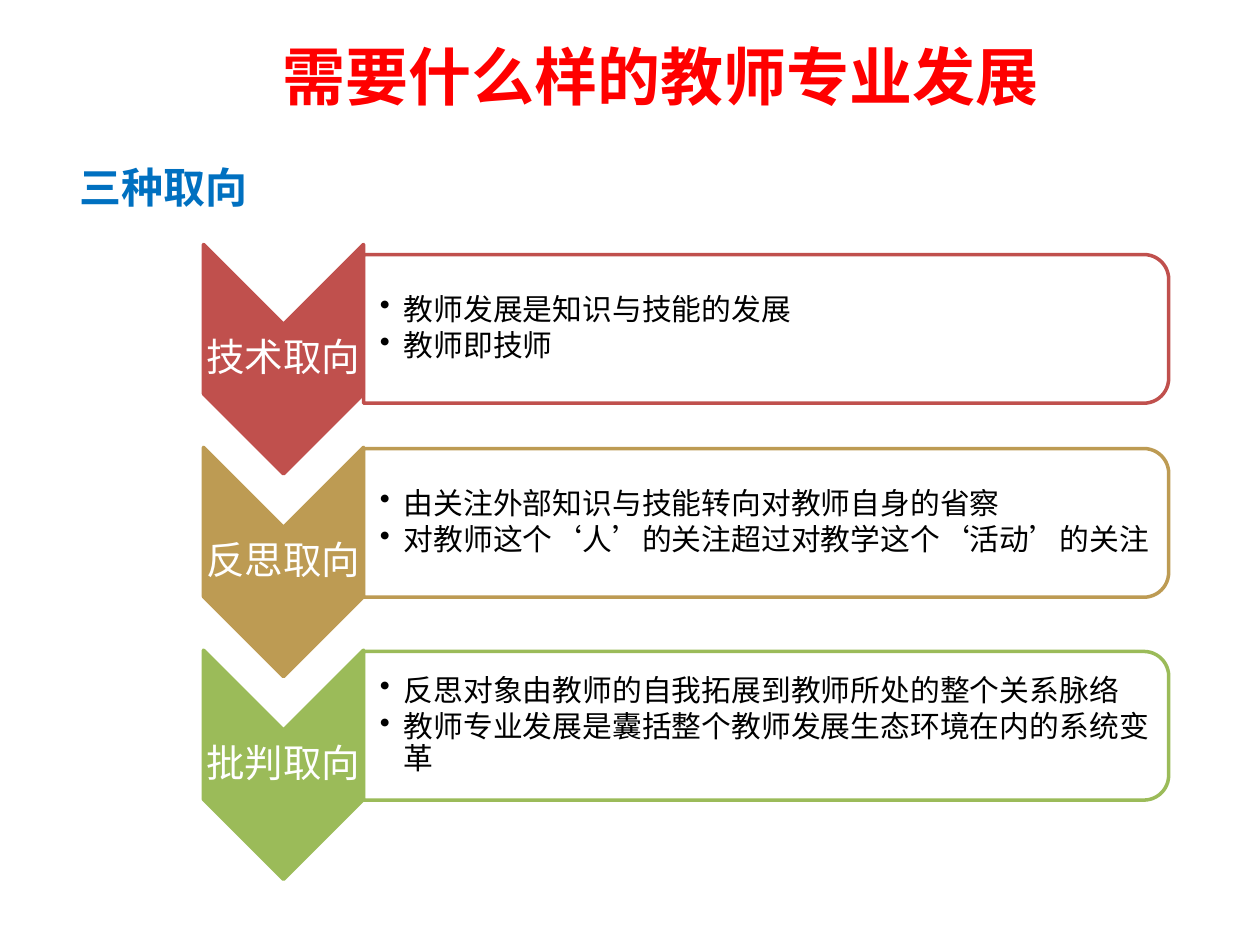
from lxml.etree import SubElement
from pptx import Presentation
from pptx.dml.color import RGBColor
from pptx.enum.shapes import MSO_SHAPE as Shape
from pptx.enum.text import MSO_ANCHOR as Anchor, MSO_AUTO_SIZE as AutoSize, PP_ALIGN as Align
from pptx.oxml.ns import qn
from pptx.util import Inches, Pt

# Content
TITLE = "需要什么样的教师专业发展"
SUBTITLE = "三种取向"
ORIENTATIONS = [
    {"name": "技术取向", "color": "C0504D", "panel_rise": 0.24,
     "points": ["教师发展是知识与技能的发展", "教师即技师"]},
    {"name": "反思取向", "color": "BD9B53", "panel_rise": 0.31,
     "points": ["由关注外部知识与技能转向对教师自身的省察",
                "对教师这个‘人’的关注超过对教学这个‘活动’的关注"]},
    {"name": "批判取向", "color": "9BBB59", "panel_rise": 0.31,
     "points": ["反思对象由教师的自我拓展到教师所处的整个关系脉络",
                "教师专业发展是囊括整个教师发展生态环境在内的系统变革"]},
]

# Theme: font, size, color, bold
THEME = {
    "title": ("Lato", 36, "FF0000", True),
    "subtitle": ("Calibri", 24, "0070C0", True),
    "label": ("Calibri", 22, "FFFFFF", False),
    "point": ("Calibri", 17, "000000", False),
}
PANEL_FILL, PANEL_ALPHA, LINE_WIDTH = "FFFFFF", 90, 2

# Layout, in inches
TITLE_AREA = (0.83, -0.03, 8.82, 1.25)
BODY_AREA = (0.53, 1.23, 9.04, 7.01)
FIRST_CENTER, ROW_PITCH = 2.85, 1.61
CHEVRON_X, CHEVRON_SIZE = 2.25, (1.82, 1.27)
PANEL_X, PANEL_SIZE = 6.08, (1.18, 6.39)
LABEL_SIZE = (1.27, 0.55)
POINTS_X, POINTS_SIZE = 6.05, (6.33, 1.07)
INDENT = 0.19


def set_all(target, values):
    for name, value in values.items():
        setattr(target, name, value)


def centered(x, y, size):
    width, height = size
    return [Inches(v) for v in (x - width / 2, y - height / 2, width, height)]


def write(frame, lines, style, inset=None, anchor=Anchor.MIDDLE, bullet=None, **spacing):
    font, size, color, bold = THEME[style]
    set_all(frame, {"word_wrap": True, "auto_size": AutoSize.NONE, "vertical_anchor": anchor})
    if inset:
        sides = ("margin_left", "margin_top", "margin_right", "margin_bottom")
        set_all(frame, {side: Inches(v) for side, v in zip(sides, inset)})
    for number, line in enumerate(lines):
        para = frame.paragraphs[0] if number == 0 else frame.add_paragraph()
        set_all(para, spacing)
        properties = para._p.get_or_add_pPr()
        indent = Inches(INDENT) if bullet else 0
        properties.set("marL", str(indent))
        properties.set("indent", str(-indent))
        if bullet:
            SubElement(properties, qn("a:buChar"), char=bullet)
        else:
            SubElement(properties, qn("a:buNone"))
        span = para.add_run()
        span.text = line
        set_all(span.font, {"name": font, "size": Pt(size), "bold": bold})
        span.font.color.rgb = RGBColor.from_string(color)


def add_rotated(page, kind, area, fill, line, alpha=None):
    shape = page.shapes.add_shape(kind, *area)
    shape.rotation = 90
    shape.shadow.inherit = False
    shape.fill.solid()
    shape.fill.fore_color.rgb = RGBColor.from_string(fill)
    shape.line.color.rgb = RGBColor.from_string(line)
    shape.line.width = Pt(LINE_WIDTH)
    if alpha:
        color = shape._element.spPr.find(qn("a:solidFill"))[0]
        SubElement(color, qn("a:alpha"), val=str(alpha * 1000))


deck = Presentation()
set_all(deck, {"slide_width": Inches(10), "slide_height": Inches(7.5)})
page = deck.slides.add_slide(deck.slide_layouts[1])

# Title and subtitle
title, body = page.shapes.title, page.placeholders[1]
for holder, area in ((title, TITLE_AREA), (body, BODY_AREA)):
    set_all(holder, dict(zip(("left", "top", "width", "height"), map(Inches, area))))
write(title.text_frame, [TITLE], "title", alignment=Align.CENTER)
write(body.text_frame, [SUBTITLE], "subtitle", anchor=Anchor.TOP, space_after=Pt(24))

# One chevron with its panel per orientation
for row, item in enumerate(ORIENTATIONS):
    center = FIRST_CENTER + row * ROW_PITCH
    panel_center = center - item["panel_rise"]
    color = item["color"]

    add_rotated(page, Shape.CHEVRON, centered(CHEVRON_X, center, CHEVRON_SIZE), color, color)
    label = page.shapes.add_textbox(*centered(CHEVRON_X, center, LABEL_SIZE))
    write(label.text_frame, [item["name"]], "label", inset=[0.02] * 4,
          alignment=Align.CENTER, line_spacing=0.9)

    add_rotated(page, Shape.ROUND_2_SAME_RECTANGLE,
                centered(PANEL_X, panel_center, PANEL_SIZE), PANEL_FILL, color, PANEL_ALPHA)
    points = page.shapes.add_textbox(*centered(POINTS_X, panel_center, POINTS_SIZE))
    write(points.text_frame, item["points"], "point", inset=(0.13, 0.01, 0.01, 0.01),
          bullet="•", line_spacing=0.9, space_after=Pt(2.5))

deck.save("out.pptx")
